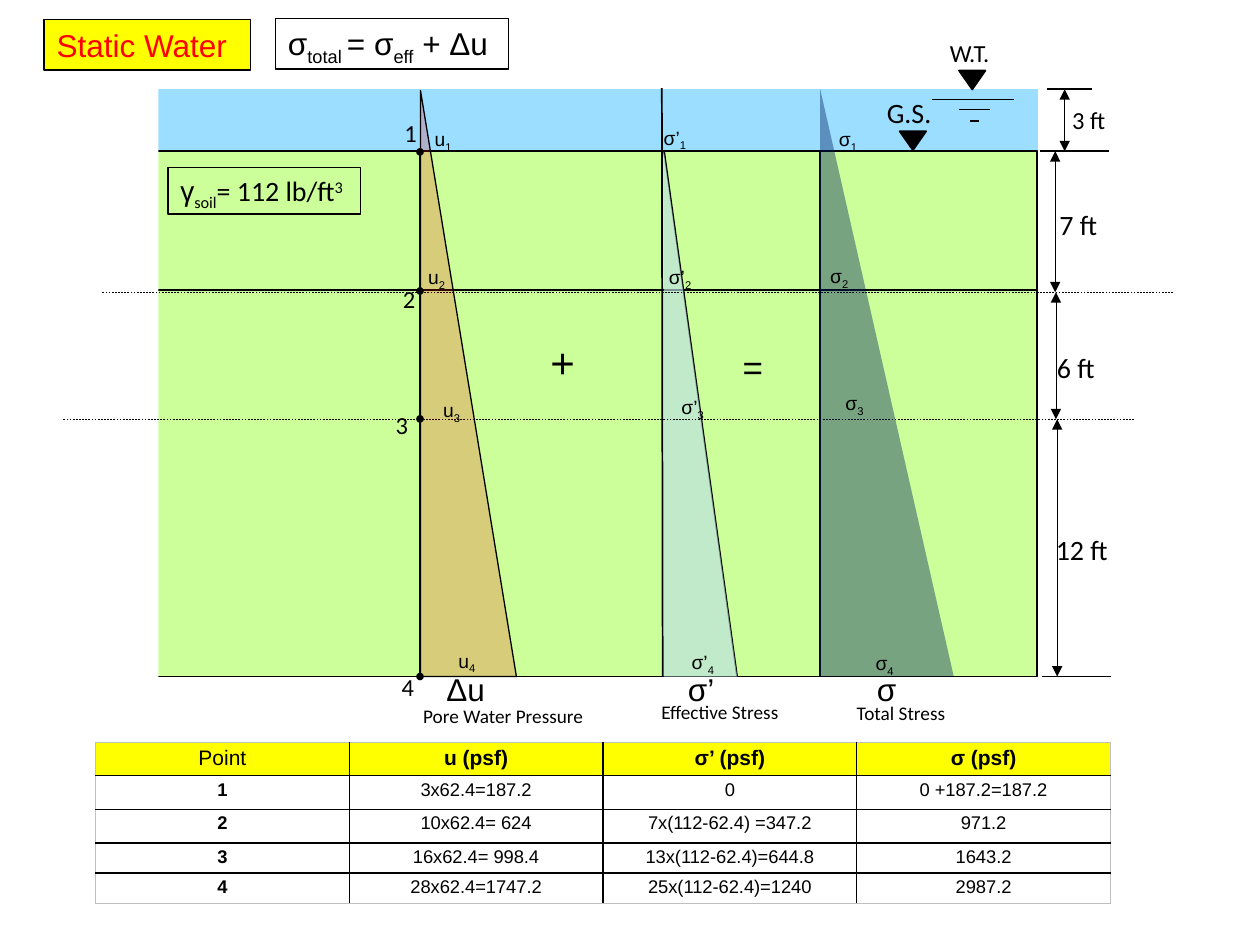
"""Build a slide on total, effective and pore water stress under static water."""
from lxml.etree import SubElement
from pptx import Presentation
from pptx.dml.color import RGBColor
from pptx.enum.dml import MSO_LINE
from pptx.enum.shapes import MSO_CONNECTOR, MSO_SHAPE
from pptx.enum.text import MSO_ANCHOR, MSO_AUTO_SIZE, PP_ALIGN
from pptx.oxml.ns import qn
from pptx.util import Pt

BLACK = RGBColor(0x00, 0x00, 0x00)
WHITE = RGBColor(0xFF, 0xFF, 0xFF)
RED = RGBColor(0xFF, 0x00, 0x00)
YELLOW = RGBColor(0xFF, 0xFF, 0x00)
WATER_BLUE = RGBColor(0x9B, 0xDE, 0xFF)
SOIL_GREEN = RGBColor(0xCC, 0xFF, 0x99)
EFFECTIVE_TEAL = RGBColor(0xBB, 0xE0, 0xE3)
TOTAL_NAVY = RGBColor(0x00, 0x20, 0x60)
TABLE_EDGE = RGBColor(0xBF, 0xBF, 0xBF)

SUB, SUPER = -25000, 30000
WATER_TOP, GROUND, BASE = 51, 86.4, 386.6
POINT_2, POINT_3 = 167, 239.6
PORE_X, EFFECTIVE_X, TOTAL_X = 240, 379.4, 468.7

STRESS_TABLE = [
    ["Point", "u (psf)", "σ’ (psf)", "σ (psf)"],
    ["1", "3x62.4=187.2", "0", "0 +187.2=187.2"],
    ["2", "10x62.4= 624", "7x(112-62.4) =347.2", "971.2"],
    ["3", "16x62.4= 998.4", "13x(112-62.4)=644.8", "1643.2"],
    ["4", "28x62.4=1747.2", "25x(112-62.4)=1240", "2987.2"],
]


def write(frame, spans, size, font="Arial", color=BLACK, wrap=False):
    """Fill a text frame with (text, baseline) spans in one format."""
    frame.text = spans[0][0]
    paragraph = frame.paragraphs[0]
    paragraph.alignment = PP_ALIGN.LEFT
    for words, _ in spans[1:]:
        paragraph.add_run().text = words
    for run, (_, baseline) in zip(paragraph.runs, spans):
        run.font.size = Pt(size)
        run.font.name = font
        run.font.color.rgb = color
        if baseline:
            run._r.get_or_add_rPr().set("baseline", str(baseline))
    frame.word_wrap = wrap
    frame.auto_size = MSO_AUTO_SIZE.SHAPE_TO_FIT_TEXT
    frame.vertical_anchor = MSO_ANCHOR.TOP


def paint(shape, fill=None, opacity=100, line_width=0):
    """Set the fill, its opacity and a black outline of a shape."""
    if fill is None:
        shape.fill.background()
    else:
        shape.fill.solid()
        shape.fill.fore_color.rgb = fill
    if opacity < 100:
        tint = shape.element.spPr.find(".//" + qn("a:srgbClr"))
        SubElement(tint, qn("a:alpha"), val=str(opacity * 1000))
    if line_width:
        shape.line.color.rgb = BLACK
        shape.line.width = Pt(line_width)
    else:
        shape.line.fill.background()


def add_block(shapes, kind, left, top, width, height, **style):
    """Add a painted preset shape without a shadow."""
    block = shapes.add_shape(kind, Pt(left), Pt(top), Pt(width), Pt(height))
    block.shadow.inherit = False
    paint(block, **style)
    return block


def add_label(shapes, spans, left, top, width, height, size, font="Arial", wrap=False):
    """Add a text box and return its text frame."""
    frame = shapes.add_textbox(Pt(left), Pt(top), Pt(width), Pt(height)).text_frame
    write(frame, spans, size, font, wrap=wrap)
    return frame


def add_rule(shapes, x1, y1, x2, y2, width=1, arrows=False, dashed=False):
    """Add a straight black line, optionally dashed or with arrowheads."""
    rule = shapes.add_connector(MSO_CONNECTOR.STRAIGHT, Pt(x1), Pt(y1), Pt(x2), Pt(y2))
    rule.line.color.rgb = BLACK
    rule.line.width = Pt(width)
    if dashed:
        rule.line.dash_style = MSO_LINE.DASH
    if arrows:
        stroke = rule.line._get_or_add_ln()
        for end in ("a:headEnd", "a:tailEnd"):
            SubElement(stroke, qn(end), type="triangle")
    SubElement(rule.element.spPr, qn("a:effectLst"))


def add_level_marker(shapes, left, top):
    """Add a solid triangle that points down at a level."""
    marker = add_block(shapes, MSO_SHAPE.ISOSCELES_TRIANGLE, left, top, 15.1, 10.8,
                       fill=BLACK, line_width=1)
    marker.rotation = 180


def add_headings(slide):
    """Add the title and the effective stress equation."""
    title = slide.shapes.title
    title.left, title.top, title.width, title.height = Pt(25.2), Pt(11), Pt(118), Pt(29)
    paint(title, YELLOW, line_width=0.75)
    write(title.text_frame, [("Static Water", 0)], 18, color=RED, wrap=True)
    title.text_frame.auto_size = MSO_AUTO_SIZE.NONE
    equation = add_block(slide.shapes, MSO_SHAPE.RECTANGLE, 157.5, 10.4, 133, 29,
                         line_width=0.75)
    write(equation.text_frame, [("σ", 0), ("total ", SUB), ("= σ", 0), ("eff", SUB),
                                (" + Δu", 0)], 18, wrap=True)


def add_ground(shapes):
    """Add the water, the soil and the soil's unit weight."""
    rectangle = MSO_SHAPE.RECTANGLE
    add_block(shapes, rectangle, 85, WATER_TOP, 521.5, 36, fill=WATER_BLUE)
    add_block(shapes, rectangle, 80.6, GROUND, 512, 300.2, fill=SOIL_GREEN, line_width=1)
    add_block(shapes, rectangle, 80.6, GROUND, 512, 79.4, line_width=1)
    add_block(shapes, rectangle, 51, 44.6, 39.5, 345.6, fill=WHITE)
    add_block(shapes, rectangle, 593.3, 41.8, 18.7, 349.2, fill=WHITE)
    weight = add_block(shapes, rectangle, 96, 95.8, 110, 26.6, line_width=0.75)
    write(weight.text_frame, [("γ", 0), ("soil", SUB), ("= 112 lb/ft", 0), ("3", SUPER)],
          16, "Calibri")
    weight.text_frame.paragraphs[0].runs[0].font.name = "Arial"


def add_stress_diagrams(shapes):
    """Add the three pressure triangles with their axes and names."""
    add_rule(shapes, PORE_X, GROUND, PORE_X, BASE)
    add_rule(shapes, EFFECTIVE_X, 85.7, 421.2, BASE)
    add_rule(shapes, TOTAL_X, GROUND, TOTAL_X, BASE)
    add_rule(shapes, 378.2, 50.4, 378.7, BASE)
    triangle = MSO_SHAPE.RIGHT_TRIANGLE
    add_block(shapes, triangle, EFFECTIVE_X, 87, 41.8, 299.6, fill=EFFECTIVE_TEAL, opacity=65)
    for right, level in [(648, POINT_3), (670.3, POINT_2)]:
        add_rule(shapes, right, level, right - 612, level, 0.25, dashed=True)
    add_block(shapes, triangle, TOTAL_X, WATER_TOP, 76.3, 335.5, fill=TOTAL_NAVY, opacity=41)
    add_block(shapes, triangle, 240.3, 51.8, 54.8, 334.8, fill=RED, opacity=20,
              line_width=0.75)
    for sign, left, top, size in [("+", 307.4, 190, 24), ("=", 416.2, 193, 20)]:
        frame = add_label(shapes, [(sign, 0)], left, top, 28, 33, size)
        frame.vertical_anchor = MSO_ANCHOR.MIDDLE
        frame.paragraphs[0].alignment = PP_ALIGN.CENTER
    for symbol, left, width in [("Δu", 248, 41), ("σ’", 386, 29.5), ("σ", 494, 25.2)]:
        add_label(shapes, [(symbol, 0)], left, 379.4, width, 28.8, 18)
    for name, left, top, width, wrap in [("Pore Water Pressure", 234.7, 399, 126.7, True),
                                         ("Effective Stress", 370.8, 396.7, 85, True),
                                         ("Total Stress", 482.4, 397.4, 66.2, False)]:
        add_label(shapes, [(name, 0)], left, top, width, 21, 11, "Calibri", wrap)


def add_points(shapes):
    """Add the numbered points and the stress symbols at each of them."""
    for number, left, top, dot_top in [("1", 224, 64, 85), ("2", 223.2, 159, 164.5),
                                       ("3", 219, 231, 237.6), ("4", 222.5, 380.2, 384.8)]:
        add_label(shapes, [(number, 0)], left, top, 21.6, 24.5, 14, "Calibri")
        add_block(shapes, MSO_SHAPE.OVAL, 238.2, dot_top, 3.6, 3.6, fill=BLACK,
                  line_width=0.75)
    symbol_places = {
        "u": (25.2, [(241.2, 69.1), (237.6, 148.3), (246.2, 224), (254.9, 367.2)]),
        "σ’": (28.1, [(372.2, 68.4), (375.1, 148.3), (382.3, 222.5), (388.1, 368)]),
        "σ": (25.2, [(472.3, 69.1), (467.3, 147.6), (476, 220.3), (493.2, 368.6)]),
    }
    for symbol, (width, places) in symbol_places.items():
        for number, (left, top) in enumerate(places, 1):
            add_label(shapes, [(symbol, 0), (str(number), SUB)], left, top, width, 21, 11)


def add_levels(shapes):
    """Add the ground surface and water table marks."""
    ground_mark = shapes.add_group_shape().shapes
    add_level_marker(ground_mark, 514.1, 75)
    add_label(ground_mark, [("G.S.", 0)], 499.7, 51.1, 40.3, 26.6, 16, "Calibri")
    water_mark = shapes.add_group_shape().shapes
    for left, right, level in [(532.8, 579.6, 56.9), (548, 566, 62.6), (554.4, 559.4, 69.1)]:
        add_rule(water_mark, left, level, right, level)
    add_level_marker(water_mark, 548, 40.3)
    add_label(shapes, [("W.T.", 0)], 535.7, 18, 37.4, 24.5, 14, "Calibri")


def add_depths(shapes):
    """Add the depth dimensions on the right."""
    for left, right, level in [(598.3, 624.2, WATER_TOP), (594, 633.6, GROUND),
                               (595.4, 635, BASE)]:
        add_rule(shapes, left, level, right, level)
    for depth, x, top, bottom, left, label_top, size in [
            ("3 ft", 608.4, WATER_TOP, GROUND, 605.5, 56.2, 14),
            ("7 ft", 603, GROUND, POINT_2, 598.3, 115.2, 16),
            ("6 ft", 603.4, POINT_2, POINT_3, 596.9, 196.6, 16),
            ("12 ft", 604.1, POINT_3, BASE, 596.2, 301, 16)]:
        add_rule(shapes, x, top, x, bottom, 0.25, arrows=True)
        width = 44.6 if len(depth) > 4 else 36.7
        add_label(shapes, [(depth, 0)], left, label_top, width, 26.6, size, "Calibri")


def set_borders(cell, outer_sides):
    """Draw thin grey outer edges and black inner edges on a cell."""
    properties = cell._tc.get_or_add_tcPr()
    for position, side in enumerate("LRTB"):
        outer = side in outer_sides
        edge = SubElement(properties, qn("a:ln" + side), w=str(Pt(0.5 if outer else 1)))
        fill = SubElement(edge, qn("a:solidFill"))
        SubElement(fill, qn("a:srgbClr"), val=str(TABLE_EDGE if outer else BLACK))
        properties.insert(position, edge)


def add_stress_table(shapes):
    """Add the table of stresses at the four points."""
    last_row, last_column = len(STRESS_TABLE) - 1, len(STRESS_TABLE[0]) - 1
    table = shapes.add_table(last_row + 1, last_column + 1, Pt(54.6), Pt(424.1),
                             Pt(580), Pt(92.2)).table
    table.first_row = table.horz_banding = False
    for row, height in zip(table.rows, [19.2, 19.2, 19.2, 17.3, 17.3]):
        row.height = Pt(height)
    for r, values in enumerate(STRESS_TABLE):
        for c, value in enumerate(values):
            cell = table.cell(r, c)
            cell.text = value
            cell.margin_left = cell.margin_right = Pt(5)
            cell.margin_top = cell.margin_bottom = Pt(2.2)
            paragraph = cell.text_frame.paragraphs[0]
            paragraph.alignment = PP_ALIGN.CENTER
            font = paragraph.runs[0].font
            font.name, font.size = "Arial", Pt(10.5 if r else 12)
            font.bold = (r == 0) != (c == 0)
            font.color.rgb = BLACK
            if r:
                cell.fill.background()
            else:
                cell.fill.solid()
                cell.fill.fore_color.rgb = YELLOW
            at_edge = {"L": c == 0, "R": c == last_column, "T": r == 0, "B": r == last_row}
            set_borders(cell, [side for side, outer in at_edge.items() if outer])


def main():
    """Build and save the slide."""
    presentation = Presentation()
    presentation.slide_width, presentation.slide_height = Pt(720), Pt(540)
    slide = presentation.slides.add_slide(presentation.slide_layouts[5])
    add_headings(slide)
    for add_part in (add_ground, add_stress_diagrams, add_points, add_levels, add_depths,
                     add_stress_table):
        add_part(slide.shapes)
    presentation.save("out.pptx")


if __name__ == "__main__":
    main()
